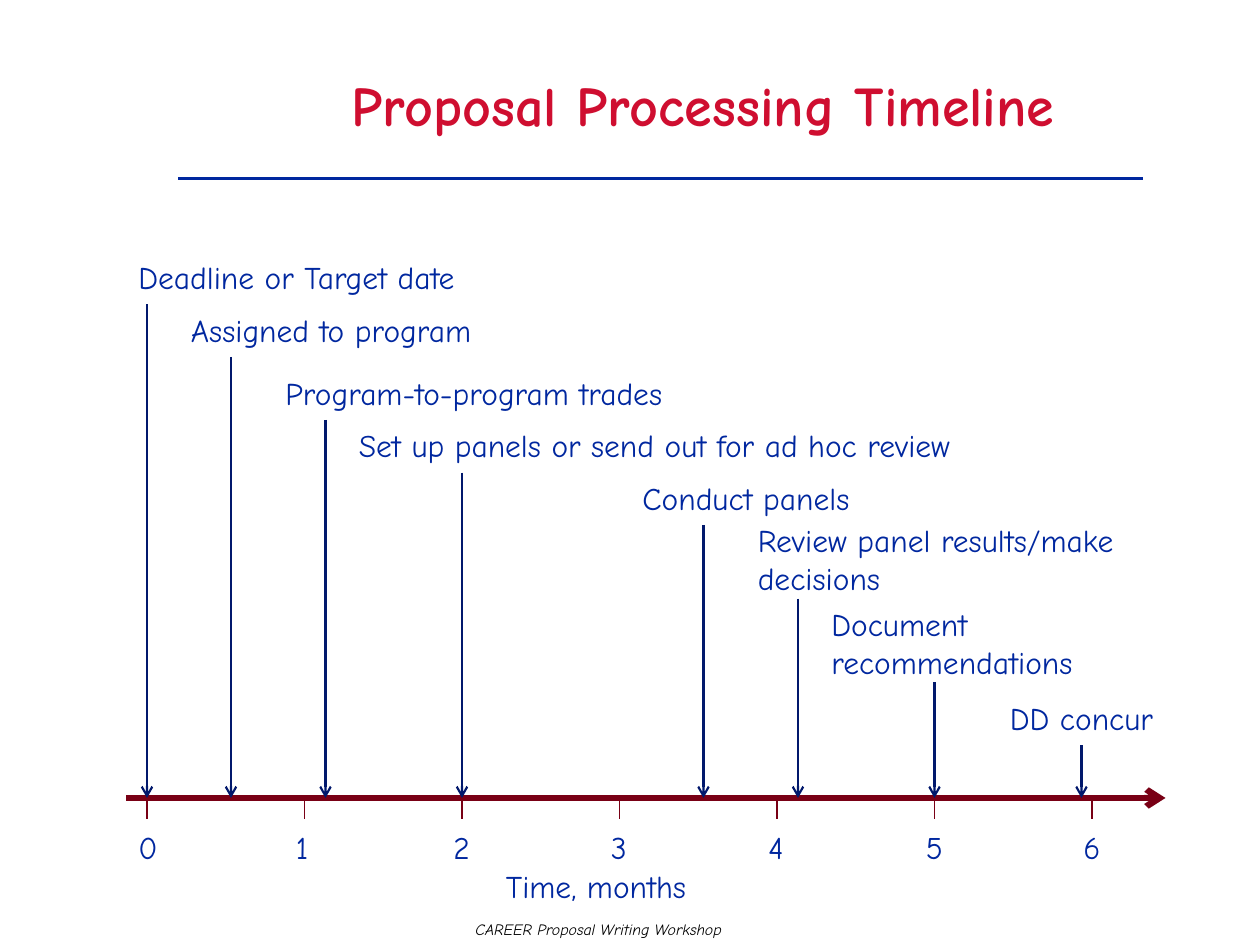
from lxml import etree
from pptx import Presentation
from pptx.dml.color import RGBColor
from pptx.enum import shapes, text
from pptx.oxml.ns import qn
from pptx.util import Pt

FONT = "Comic Neue"
RED = RGBColor(0xCF, 0x0E, 0x30)
BLUE = RGBColor(0x00, 0x27, 0x9F)
NAVY = RGBColor(0x01, 0x18, 0x6C)
MAROON = RGBColor(0x79, 0x00, 0x15)
WHITE = RGBColor(0xFF, 0xFF, 0xFF)
BLACK = RGBColor(0, 0, 0)

AXIS_Y = 456
MONTH_0 = 84
MONTH_STEP = 90

# label, text left, text top, text width, arrow x, arrow top
EVENTS = [
    ("Deadline or Target date", 72, 144, 240, 84, 174),
    ("Assigned to program", 102, 174, 240, 132, 204),
    ("Program-to-program trades", 156, 210, 270, 186, 240),
    ("Set up panels or send out for ad hoc review", 198, 240, 390, 264, 270),
    ("Conduct panels", 360, 270, 270, 402, 300),
    ("Review panel results/make decisions", 426, 294, 222, 456, 342),
    ("Document recommendations", 468, 342, 222, 534, 390),
    ("DD concur", 570, 396, 150, 618, 426),
]


def format_text(p, size, color, bold=False, italic=False):
    for r in p.runs:
        f = r.font
        f.name, f.size, f.bold, f.italic = FONT, Pt(size), bold, italic
        f.color.rgb = color


def add_title(s, title):
    sp = s.shapes.title
    sp.left, sp.top, sp.width, sp.height = Pt(72), Pt(42), Pt(660), Pt(54)
    tf = sp.text_frame
    tf.text = title
    tf.vertical_anchor = text.MSO_ANCHOR.TOP
    p = tf.paragraphs[0]
    p.alignment = text.PP_ALIGN.CENTER
    p.line_spacing = 0.87
    format_text(p, 32, RED, bold=True)


def add_label(s, label, x, y, w, h=29):
    tf = s.shapes.add_textbox(Pt(x), Pt(y), Pt(w), Pt(h)).text_frame
    tf.word_wrap = True
    tf.auto_size = text.MSO_AUTO_SIZE.SHAPE_TO_FIT_TEXT
    tf.text = label
    format_text(tf.paragraphs[0], 18, BLUE)


def add_line(s, x1, y1, x2, y2, color, width, arrow=False):
    cx = s.shapes.add_connector(
        shapes.MSO_CONNECTOR.STRAIGHT, Pt(x1), Pt(y1), Pt(x2), Pt(y2))
    cx.line.color.rgb = color
    cx.line.width = Pt(width)
    if arrow:
        ln = cx.line._get_or_add_ln()
        etree.SubElement(ln, qn("a:tailEnd")).set("type", "arrow")
    etree.SubElement(cx._element.spPr, qn("a:effectLst"))


def add_footer(s, footer):
    sp = s.shapes.add_shape(
        shapes.MSO_SHAPE.RECTANGLE, Pt(174), Pt(522), Pt(336), Pt(18))
    sp.shadow.inherit = False
    sp.fill.solid()
    sp.fill.fore_color.rgb = WHITE
    sp.line.fill.background()
    tf = sp.text_frame
    tf.text = footer
    tf.vertical_anchor = text.MSO_ANCHOR.TOP
    p = tf.paragraphs[0]
    p.alignment = text.PP_ALIGN.CENTER
    format_text(p, 9, BLACK, italic=True)


def add_axis(s):
    add_line(s, 72, AXIS_Y, 666, AXIS_Y, MAROON, 3.5, arrow=True)
    for month in range(7):
        x = MONTH_0 + MONTH_STEP * month
        add_line(s, x, AXIS_Y, x, AXIS_Y + 12, MAROON, 1)
        add_label(s, str(month), x - 12, 469.5, 21)
    add_label(s, "Time, months", 282, 492, 162)


def add_events(s):
    for label, x, y, w, arrow_x, arrow_top in EVENTS:
        lines = 2 if arrow_top - y > 40 else 1
        add_label(s, label, x, y, w, 29 if lines == 1 else 51)
        add_line(s, arrow_x, arrow_top, arrow_x, AXIS_Y, NAVY, 1.25, arrow=True)


def main():
    prs = Presentation()
    prs.slide_width, prs.slide_height = Pt(720), Pt(540)
    s = prs.slides.add_slide(prs.slide_layouts[5])
    add_footer(s, "CAREER Proposal Writing Workshop")
    add_line(s, 102, 102, 653, 102, BLUE, 2)
    add_title(s, "Proposal Processing Timeline")
    add_axis(s)
    add_events(s)
    prs.save("out.pptx")


if __name__ == "__main__":
    main()
